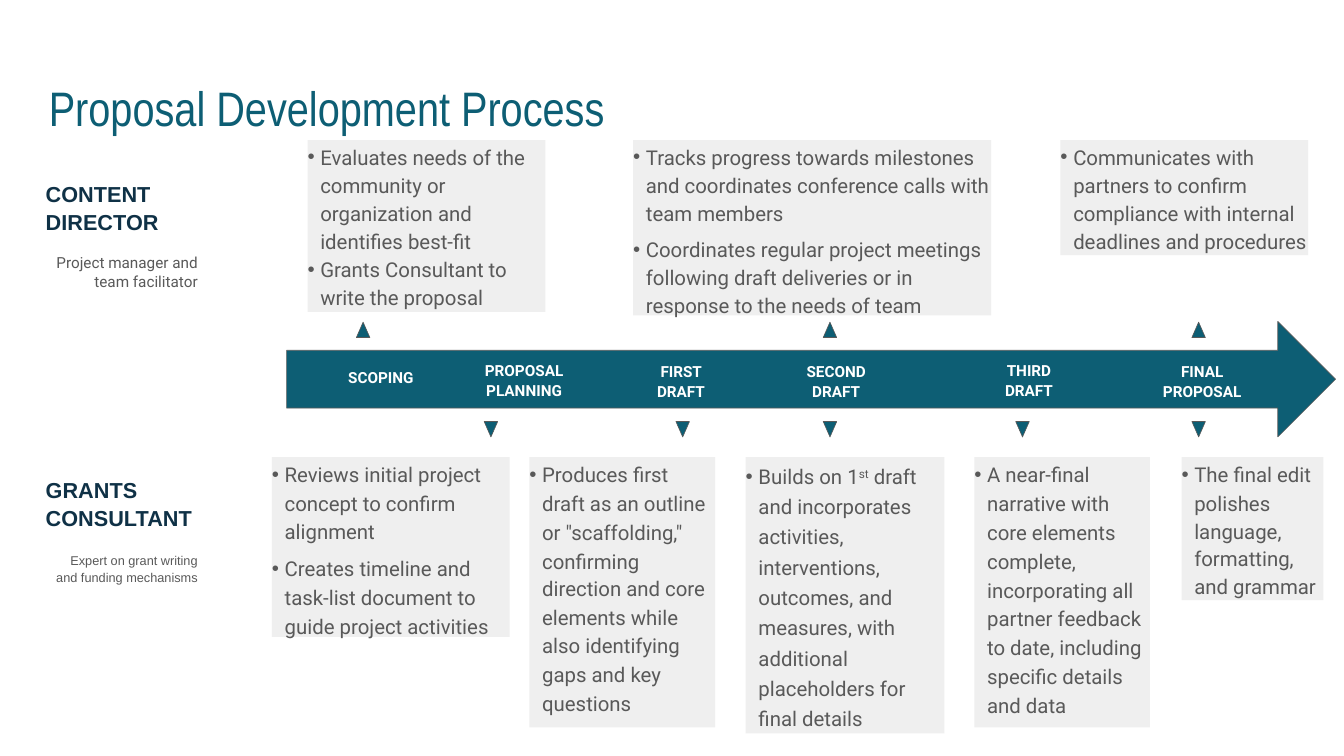
from collections import namedtuple
from lxml.etree import SubElement
from pptx import Presentation
from pptx.dml.color import RGBColor
from pptx.enum.shapes import MSO_SHAPE as Shape
from pptx.enum.text import MSO_ANCHOR as Anchor, PP_ALIGN as Align
from pptx.oxml.ns import qn
from pptx.util import Cm, Pt

TEAL = RGBColor(0x0D, 0x5E, 0x74)
NAVY = RGBColor(0x0F, 0x31, 0x46)
GRAY = RGBColor(0x59, 0x59, 0x59)
PALE = RGBColor(0xEF, 0xEF, 0xEF)
WHITE = RGBColor(0xFF, 0xFF, 0xFF)

HANG = 0.53  # bullet indent in cm

# Lengths in cm, space before in points
Note = namedtuple("Note", "text spacing before bullet", defaults=(1.15, 0, True))
Card = namedtuple("Card", "left width height notes")
Style = namedtuple("Style", "font size color bold", defaults=(False,))

TITLE = Style("Arial Narrow", 57, TEAL)
ROLE = Style("Arial", 25.5, NAVY, True)
STAGE = Style("Roboto", 18, WHITE, True)
BODY = Style("Roboto", 24, GRAY)

DIRECTOR_CARDS = [
    Card(12.78, 9.88, 7.14, [
        Note("Evaluates needs of the community or organization and identifies best-fit"),
        Note("Grants Consultant to write the proposal")]),
    Card(26.31, 14.88, 7.29, [
        Note("Tracks progress towards milestones and coordinates conference "
             "calls with team members"),
        Note("Coordinates regular project meetings following draft deliveries "
             "or in response to the needs of team", 1.15, 9.6)]),
    Card(44.07, 10.29, 4.78, [
        Note("Communicates with partners to confirm compliance with internal "
             "deadlines and procedures")]),
]
CONSULTANT_CARDS = [
    Card(11.3, 9.88, 7.47, [
        Note("Reviews initial project concept to confirm alignment", 1.17),
        Note("Creates timeline and task-list document to guide project "
             "activities", 1.18, 9.8)]),
    Card(22, 7.72, 11.23, [
        Note("Produces first\ndraft as an outline or \"scaffolding,\" confirming", 1.18),
        Note("direction and core", 1, 2.9, False),
        Note("elements while also identifying gaps and key questions", 1.17, 0.6, False)]),
    Card(30.99, 8.26, 11.48, [
        Note("Builds on 1^st^ draft and incorporates activities,\ninterventions, "
             "outcomes, and measures, with additional placeholders for "
             "final details", 1.24)]),
    Card(40.49, 7.29, 11.23, [
        Note("A near-final narrative with core elements complete, incorporating "
             "all partner feedback to date, including specific details and data", 1.18)]),
    Card(49.1, 5.89, 5.94, [
        Note("The final edit polishes language,", 1.17),
        Note("formatting,", 1, 2.9, False),
        Note("and grammar", 1, 4.5, False)]),
]
# Label, centre from the arrow's left, top from the arrow's top, width
STAGES = [
    ("SCOPING", 3.92, 1.88, 2.95),
    ("PROPOSAL PLANNING", 9.87, 1.57, 3.51),
    ("FIRST DRAFT", 16.39, 1.61, 2.21),
    ("SECOND DRAFT", 22.84, 1.61, 2.67),
    ("THIRD DRAFT", 30.85, 1.58, 2.21),
    ("FINAL PROPOSAL", 38.05, 1.61, 3.51),
]
# Pointer centres from the arrow's left
UP_POINTERS = [3.18, 22.58, 37.9]
DOWN_POINTERS = [8.49, 16.46, 22.58, 30.58, 37.9]


def prepare_frame(box, inset):
    frame = box.text_frame
    frame.word_wrap = True
    frame.vertical_anchor = Anchor.TOP
    frame.margin_left = frame.margin_right = frame.margin_bottom = 0
    frame.margin_top = Cm(inset)
    return frame


def add_text(para, text, style):
    """Carets enclose superscript; a newline breaks the line."""
    for i, piece in enumerate(text.split("^")):
        for j, line in enumerate(piece.split("\n")):
            if j:
                para.add_line_break()
            span = para.add_run()
            span.text = line
            span.font.name = style.font
            span.font.size = Pt(style.size)
            span.font.bold = style.bold
            span.font.color.rgb = style.color
            if i % 2:
                span._r.get_or_add_rPr().set("baseline", "30000")


def add_label(page, left, top, width, height, text, style,
              align=Align.LEFT, spacing=1.0, inset=0.05):
    box = page.shapes.add_textbox(Cm(left), Cm(top), Cm(width), Cm(height))
    para = prepare_frame(box, inset).paragraphs[0]
    para.alignment = align
    para.line_spacing = spacing
    add_text(para, text, style)


def add_solid(page, kind, left, top, width, height, fill, line=None):
    box = page.shapes.add_shape(kind, Cm(left), Cm(top), Cm(width), Cm(height))
    box.shadow.inherit = False
    box.fill.solid()
    box.fill.fore_color.rgb = fill
    if line is None:
        box.line.fill.background()
    else:
        box.line.color.rgb = line
        box.line.width = Pt(0.75)
    return box


def indent_note(para, bullet):
    props = para._p.get_or_add_pPr()
    props.set("marL", str(Cm(HANG)))
    props.set("indent", str(-Cm(HANG) if bullet else 0))
    if bullet:
        color = SubElement(props, qn("a:buClr"))
        SubElement(color, qn("a:srgbClr")).set("val", str(GRAY))
        SubElement(props, qn("a:buFont")).set("typeface", "Arial")
        SubElement(props, qn("a:buChar")).set("char", "•")


def add_cards(page, top, cards):
    for card in cards:
        box = add_solid(page, Shape.RECTANGLE, card.left, top, card.width, card.height, PALE)
        frame = prepare_frame(box, 0.04)
        for i, note in enumerate(card.notes):
            para = frame.add_paragraph() if i else frame.paragraphs[0]
            indent_note(para, note.bullet)
            para.alignment = Align.LEFT
            para.line_spacing = note.spacing
            if i:
                para.space_before = Pt(note.before)
            add_text(para, note.text, BODY)


def add_role(page, left, top, name, duty, duty_style, duty_gap, duty_spacing, duty_inset):
    # A fixed break keeps each word of the name on its own line
    add_label(page, left, top, 6.8, 2.44, name, ROLE, spacing=1.09, inset=0.15)
    add_label(page, left, top + duty_gap, 6.32, 1.5, duty, duty_style,
              Align.RIGHT, duty_spacing, duty_inset)


def add_timeline(page, left, top, width, height):
    # Arrow and stage names
    add_solid(page, Shape.RIGHT_ARROW, left, top, width, height, TEAL, GRAY)
    for name, centre, drop, label_width in STAGES:
        add_label(page, left + centre - label_width / 2, top + drop, label_width, 1.65,
                  name, STAGE, Align.CENTER, 1.07, 0.03)

    # Pointers to the cards above and below
    pointer_width, pointer_height = 0.56, 0.64
    rows = [(UP_POINTERS, 0.03, 0), (DOWN_POINTERS, height - pointer_height, 180)]
    for centres, drop, turn in rows:
        for centre in centres:
            pointer = add_solid(page, Shape.ISOSCELES_TRIANGLE,
                                left + centre - pointer_width / 2, top + drop,
                                pointer_width, pointer_height, TEAL, GRAY)
            pointer.rotation = turn


def main():
    deck = Presentation()
    deck.slide_width, deck.slide_height = Cm(55.85), Cm(31.42)
    page = deck.slides.add_slide(deck.slide_layouts[6])

    add_label(page, 2.03, 3.18, 30.96, 2.49, "Proposal Development Process", TITLE)
    add_role(page, 1.9, 7.26, "CONTENT\nDIRECTOR", "Project manager and team facilitator",
             Style("Roboto", 18, GRAY), 3.15, 1.0, 0.13)
    add_cards(page, 5.82, DIRECTOR_CARDS)
    add_role(page, 1.9, 19.56, "GRANTS\nCONSULTANT",
             "Expert on grant writing\nand funding mechanisms",
             Style("Arial", 15, GRAY), 3.33, 1.1, 0.03)
    add_cards(page, 19, CONSULTANT_CARDS)
    add_timeline(page, 11.91, 13.36, 43.59, 4.8)

    deck.save("out.pptx")


if __name__ == "__main__":
    main()
